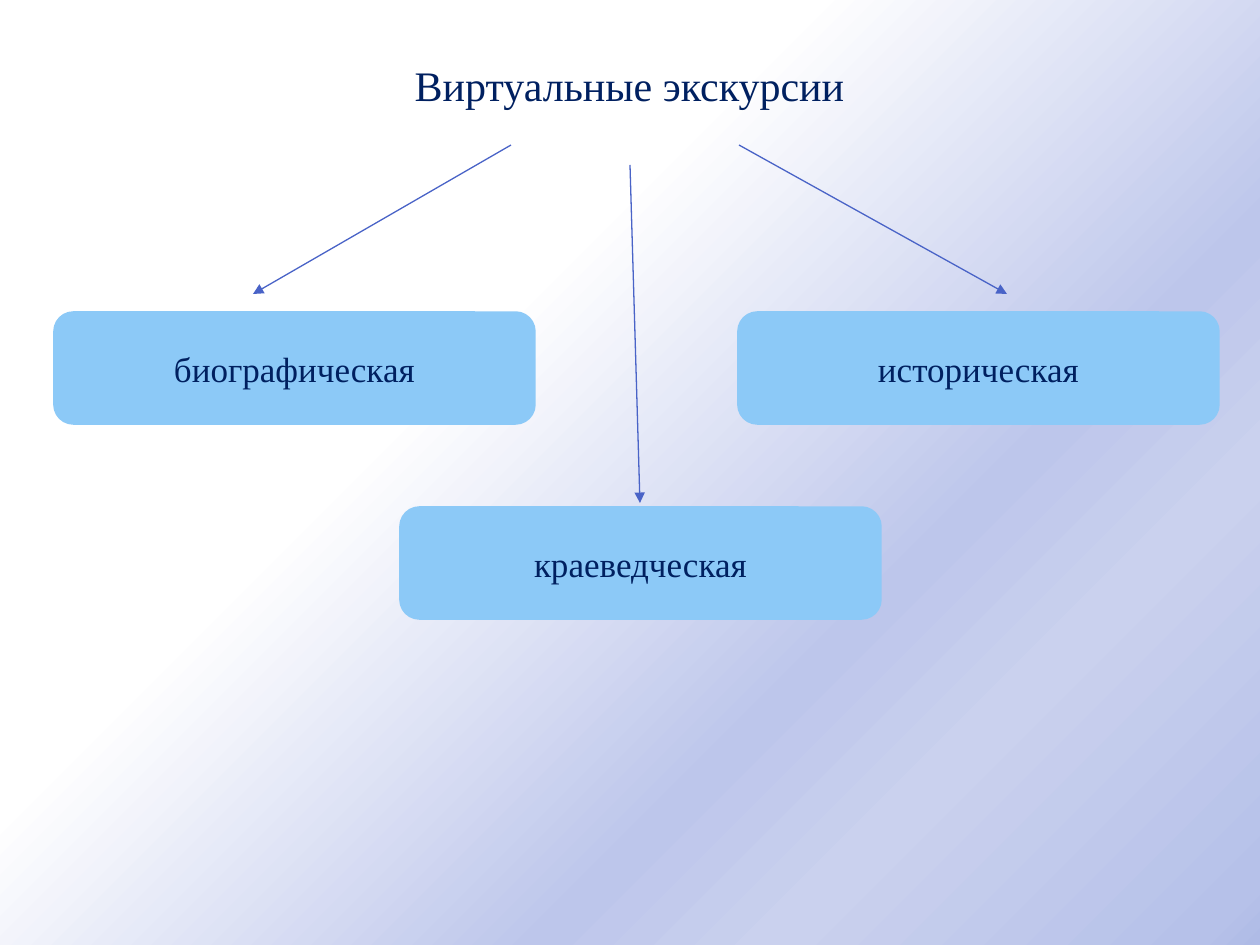
from typing import NamedTuple

from lxml import etree
from pptx import Presentation
from pptx.dml.color import RGBColor
from pptx.enum.shapes import MSO_CONNECTOR, MSO_SHAPE
from pptx.enum.text import MSO_ANCHOR, PP_ALIGN
from pptx.oxml.ns import qn
from pptx.slide import Slide
from pptx.text.text import TextFrame
from pptx.util import Emu, Pt

STRAIGHT = MSO_CONNECTOR.STRAIGHT
ROUNDED_RECTANGLE = MSO_SHAPE.ROUNDED_RECTANGLE
MIDDLE = MSO_ANCHOR.MIDDLE
CENTER = PP_ALIGN.CENTER

NAVY = RGBColor(0x00, 0x20, 0x60)
SKY = RGBColor(0x8C, 0xC9, 0xF7)
INDIGO = RGBColor(0x49, 0x63, 0xC7)
BACKGROUND_STOPS = (
    (37, RGBColor(0xFF, 0xFF, 0xFF)),
    (67, RGBColor(0xBD, 0xC6, 0xEB)),
    (78, RGBColor(0xCA, 0xD1, 0xEE)),
    (97, RGBColor(0xB6, 0xC1, 0xE9)),
    (100, RGBColor(0xAF, 0xBB, 0xE6)),
)
FONT = "Times New Roman"
EMU_PER_PX = 914400 / 126
CARD_WIDTH, CARD_HEIGHT = 479, 110


class Excursion(NamedTuple):
    label: str
    left: int
    top: int


class Arrow(NamedTuple):
    x1: int
    y1: int
    x2: int
    y2: int


EXCURSIONS = (
    Excursion("биографическая", 55, 313),
    Excursion("краеведческая", 401, 508),
    Excursion("историческая", 739, 313),
)
ARROWS = (
    Arrow(739, 145, 1007, 294),
    Arrow(630, 165, 640, 503),
    Arrow(511, 145, 253, 294),
)


def px(length: int) -> Emu:
    return Emu(round(length * EMU_PER_PX))


def set_label(frame: TextFrame, label: str, size: int) -> None:
    frame.text = label
    frame.word_wrap = True
    frame.vertical_anchor = MIDDLE
    paragraph = frame.paragraphs[0]
    paragraph.alignment = CENTER
    font = paragraph.runs[0].font
    font.name = FONT
    font.size = Pt(size)
    font.bold = False
    font.color.rgb = NAVY


def paint_background(slide: Slide) -> None:
    fill = slide.background.fill
    fill.gradient()
    fill.gradient_angle = 315
    stops = slide.element.find(".//" + qn("a:gsLst"))
    for stop in list(stops):
        stops.remove(stop)
    for percent, color in BACKGROUND_STOPS:
        stop = etree.SubElement(stops, qn("a:gs"), pos=str(percent * 1000))
        etree.SubElement(stop, qn("a:srgbClr"), val=str(color))


def add_title(slide: Slide) -> None:
    title = slide.shapes.title
    title.left, title.top = px(74), px(34)
    title.width, title.height = px(1111), px(149)
    set_label(title.text_frame, "Виртуальные экскурсии", 24)
    title.text_frame.margin_bottom = px(54)


def add_arrow(slide: Slide, arrow: Arrow) -> None:
    connector = slide.shapes.add_connector(STRAIGHT, *map(px, arrow))
    connector.line.color.rgb = INDIGO
    connector.line.width = Pt(0.75)
    properties = connector._element.spPr
    etree.SubElement(properties.find(qn("a:ln")), qn("a:tailEnd"), type="triangle")
    etree.SubElement(properties, qn("a:effectLst"))


def add_excursion(slide: Slide, excursion: Excursion) -> None:
    card = slide.shapes.add_shape(
        ROUNDED_RECTANGLE,
        px(excursion.left),
        px(excursion.top),
        px(CARD_WIDTH),
        px(CARD_HEIGHT),
    )
    card.shadow.inherit = False
    card.fill.solid()
    card.fill.fore_color.rgb = SKY
    card.line.color.rgb = SKY
    card.line.width = Pt(2)
    set_label(card.text_frame, excursion.label, 20)


def main() -> None:
    presentation = Presentation()
    presentation.slide_width = px(1260)
    presentation.slide_height = px(945)
    slide = presentation.slides.add_slide(presentation.slide_layouts[5])
    paint_background(slide)
    add_title(slide)
    for arrow in ARROWS:
        add_arrow(slide, arrow)
    for excursion in EXCURSIONS:
        add_excursion(slide, excursion)
    presentation.save("out.pptx")


if __name__ == "__main__":
    main()
